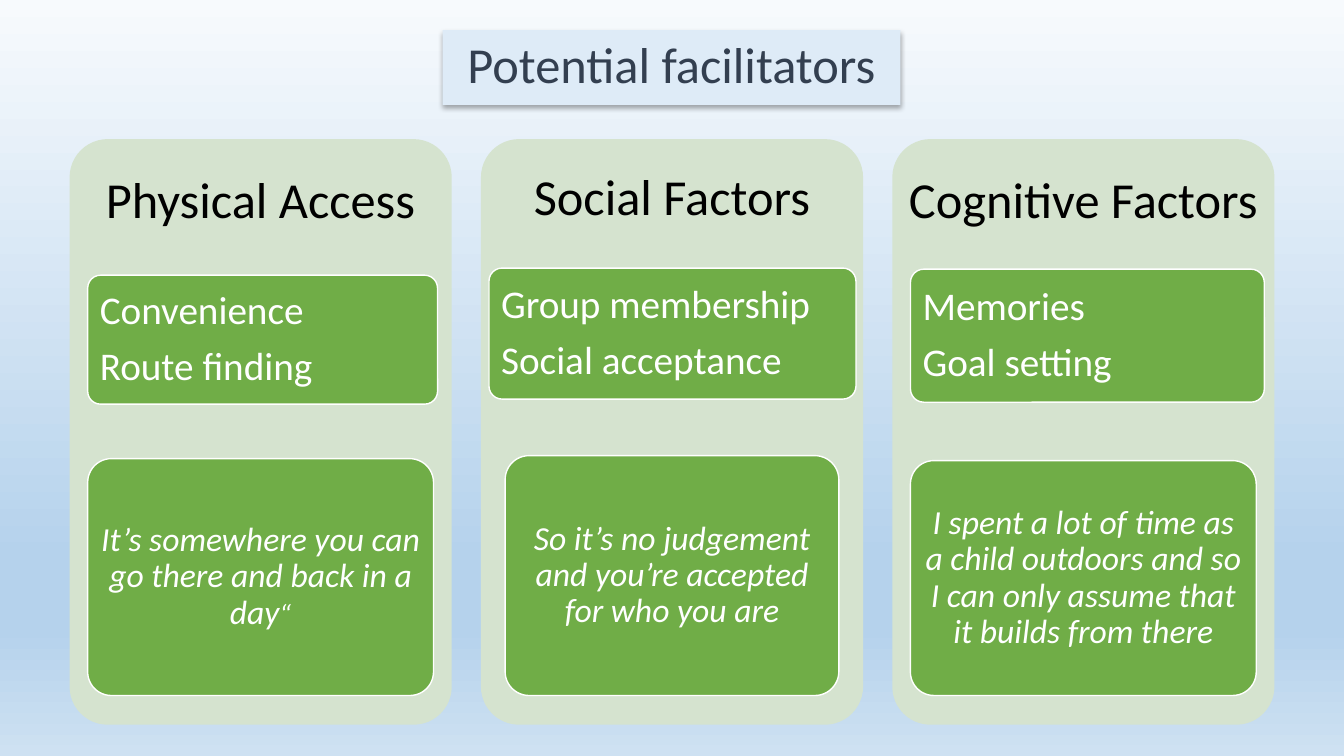
from lxml import etree
from pptx import Presentation
from pptx.dml.color import RGBColor
from pptx.enum.shapes import MSO_SHAPE
from pptx.enum.text import MSO_ANCHOR, PP_ALIGN
from pptx.oxml.ns import qn
from pptx.util import Inches, Pt

ROUND_RECT = MSO_SHAPE.ROUNDED_RECTANGLE
TOP, MIDDLE = MSO_ANCHOR.TOP, MSO_ANCHOR.MIDDLE
LEFT, CENTER = PP_ALIGN.LEFT, PP_ALIGN.CENTER

FONT = "Calibri"
COLORS = {
    "panel": "D5E3CF", "box": "70AD47", "white": "FFFFFF", "heading": "000000",
    "title_fill": "DEEBF7", "title_text": "333F50", "shadow": "000000",
}
BACKGROUND = [(0, "F7FAFD"), (74, "B5D2EC"), (83, "B5D2EC"), (100, "CEE1F2")]

TITLE = "Potential facilitators"
# Boxes are (left, top, width, height); heading_inset is the gap above the heading
COLUMNS = [
    {
        "heading": "Physical Access", "heading_inset": 0.29,
        "factors": ["Convenience", "Route finding"],
        "factors_box": (0.87, 2.73, 3.47, 1.28),
        "quote": [("It’s somewhere you can go there and back in a day", 24), ("“", 20)],
        "quote_box": (0.87, 4.55, 3.43, 2.35),
    },
    {
        "heading": "Social Factors", "heading_inset": 0.26,
        "factors": ["Group membership", "Social acceptance"],
        "factors_box": (4.85, 2.66, 3.64, 1.3),
        "quote": [("So it’s no judgement and you’re accepted for who you are", 24)],
        "quote_box": (5.01, 4.52, 3.31, 2.38),
    },
    {
        "heading": "Cognitive Factors", "heading_inset": 0.29,
        "factors": ["Memories", "Goal setting"],
        "factors_box": (9.03, 2.67, 3.51, 1.32),
        "quote": [("I spent a lot of time as a child outdoors and so I can only "
                   "assume that it builds from there", 24)],
        "quote_box": (9.03, 4.57, 3.43, 2.33),
    },
]
PANEL_LEFT, PANEL_TOP, PANEL_W, PANEL_H = 0.69, 1.38, 3.79, 5.81
PANEL_STEP = 4.08
CORNER = 0.1


def rgb(name):
    return RGBColor.from_string(COLORS[name])


def set_background(slide):
    fill = slide.background.fill
    fill.gradient()
    fill.gradient_angle = 270
    stops = slide.element.find(".//" + qn("a:gsLst"))
    for stop in list(stops):
        stops.remove(stop)
    for percent, color in BACKGROUND:
        stop = etree.SubElement(stops, qn("a:gs"), pos=str(percent * 1000))
        etree.SubElement(stop, qn("a:srgbClr"), val=color)


def add_shadow(sp):
    effects = etree.SubElement(sp.element.spPr, qn("a:effectLst"))
    shadow = etree.SubElement(effects, qn("a:outerShdw"), blurRad=str(Pt(3.5)),
                              dist=str(Pt(2.2)), dir="5400000", rotWithShape="0")
    color = etree.SubElement(shadow, qn("a:srgbClr"), val=COLORS["shadow"])
    etree.SubElement(color, qn("a:alpha"), val="32000")


def add_card(slide, box, fill, inset_x, inset_y, anchor=MIDDLE, outlined=True):
    """Rounded box whose text insets are measured from its outer edges."""
    sp = slide.shapes.add_shape(ROUND_RECT, *map(Inches, box))
    sp.adjustments[0] = CORNER
    sp.shadow.inherit = False
    sp.fill.solid()
    sp.fill.fore_color.rgb = rgb(fill)
    if outlined:
        sp.line.color.rgb = rgb("white")
        sp.line.width = Pt(1)
    else:
        sp.line.fill.background()
    corner_inset = 0.29 * CORNER * min(box[2:])
    tf = sp.text_frame
    tf.word_wrap = True
    tf.vertical_anchor = anchor
    tf.margin_left = tf.margin_right = Inches(max(0, inset_x - corner_inset))
    tf.margin_top = tf.margin_bottom = Inches(max(0, inset_y - corner_inset))
    return tf


def add_run(p, text, size, color, italic=False):
    r = p.add_run()
    r.text = text
    r.font.name = FONT
    r.font.size = Pt(size)
    r.font.italic = italic
    r.font.color.rgb = rgb(color)


def add_column(slide, index, column):
    panel = (PANEL_LEFT + index * PANEL_STEP, PANEL_TOP, PANEL_W, PANEL_H)
    tf = add_card(slide, panel, "panel", 0.12, column["heading_inset"], TOP, False)
    p = tf.paragraphs[0]
    p.alignment = CENTER
    add_run(p, column["heading"], 36, "heading")

    tf = add_card(slide, column["factors_box"], "box", 0.12, 0.1)
    tf.text = "\n".join(column["factors"])
    for p in tf.paragraphs:
        p.alignment = LEFT
        p.line_spacing = 0.9
        p.space_after = Pt(9.8)
        font = p.runs[0].font
        font.name, font.size = FONT, Pt(28)
        font.color.rgb = rgb("white")

    p = add_card(slide, column["quote_box"], "box", 0.13, 0.12).paragraphs[0]
    p.alignment = CENTER
    p.line_spacing = 0.9
    for text, size in column["quote"]:
        add_run(p, text, size, "white", italic=True)


def add_title(slide):
    sp = slide.shapes.title
    sp.left, sp.top, sp.width, sp.height = map(Inches, (4.39, 0.3, 4.54, 0.74))
    sp.fill.solid()
    sp.fill.fore_color.rgb = rgb("title_fill")
    add_shadow(sp)
    tf = sp.text_frame
    tf.vertical_anchor = MIDDLE
    p = tf.paragraphs[0]
    p.alignment = CENTER
    p.line_spacing = 0.9
    add_run(p, TITLE, 36, "title_text")


def main():
    prs = Presentation()
    prs.slide_width, prs.slide_height = Inches(13.33), Inches(7.5)
    slide = prs.slides.add_slide(prs.slide_layouts[5])
    set_background(slide)
    add_title(slide)
    for index, column in enumerate(COLUMNS):
        add_column(slide, index, column)
    prs.save("out.pptx")


if __name__ == "__main__":
    main()
